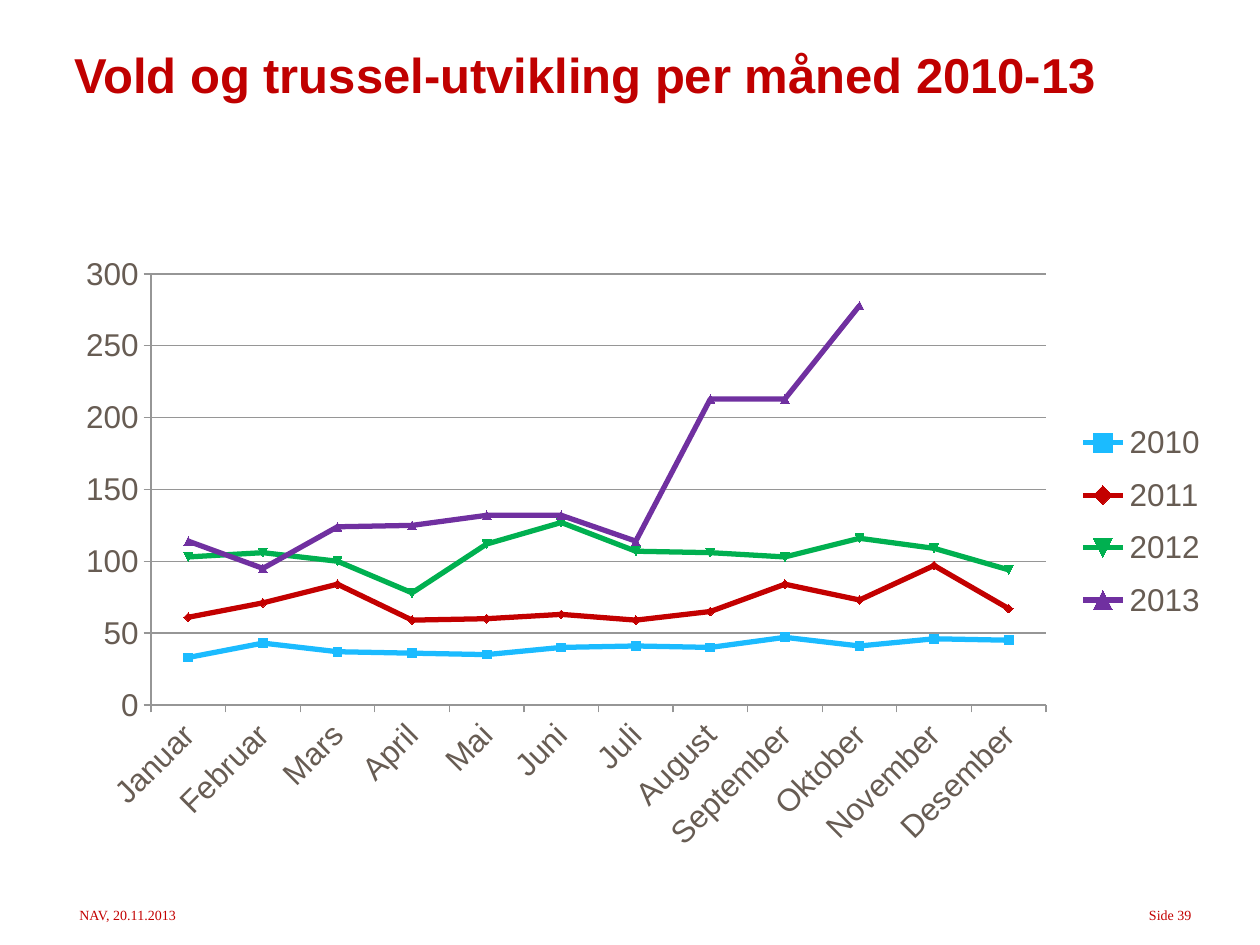
from lxml.etree import SubElement
from pptx import Presentation
from pptx.chart.data import CategoryChartData
from pptx.dml.color import RGBColor
from pptx.enum.chart import XL_CHART_TYPE, XL_LEGEND_POSITION, XL_MARKER_STYLE, XL_TICK_MARK
from pptx.enum.text import MSO_ANCHOR, PP_ALIGN
from pptx.oxml.ns import qn
from pptx.util import Pt

PX = 914400 // 126
RED, TITLE_RED, TEXT, GRID = "C30000", "C00000", "675C53", "969696"

TITLE = "Vold og trussel-utvikling per måned 2010-13"
FOOTERS = [
    ("NAV, 20.11.2013", (67, 900, 126, 29), PP_ALIGN.LEFT),
    ("Side 39", (1134, 900, 70, 29), PP_ALIGN.RIGHT),
]
MONTHS = ["Januar", "Februar", "Mars", "April", "Mai", "Juni", "Juli",
          "August", "September", "Oktober", "November", "Desember"]
YEARS = [
    ("2010", "1BBBFF", [33, 43, 37, 36, 35, 40, 41, 40, 47, 41, 46, 45]),
    ("2011", "C30000", [61, 71, 84, 59, 60, 63, 59, 65, 84, 73, 97, 67]),
    ("2012", "00B050", [103, 106, 100, 78, 112, 127, 107, 106, 103, 116, 109, 94]),
    ("2013", "7030A0", [114, 95, 124, 125, 132, 132, 114, 213, 213, 278, None, None]),
]
CHART_BOX = (63, 244, 1154, 620)
PLOT_BOX = (151, 274, 895, 431)
LEGEND_BOX = (1073, 408, 137, 227)


def rgb(color):
    return RGBColor.from_string(color)


def emu(box):
    return [value * PX for value in box]


def style_font(font, name, size, color, bold=False):
    font.name, font.size, font.bold = name, Pt(size), bold
    font.color.rgb = rgb(color)


def add_text(slide, text, box, name, size, color, bold=False,
             align=PP_ALIGN.LEFT, wrap=False):
    frame = slide.shapes.add_textbox(*emu(box)).text_frame
    frame.word_wrap = wrap
    frame.vertical_anchor = MSO_ANCHOR.TOP
    para = frame.paragraphs[0]
    para.text, para.alignment = text, align
    style_font(para.font, name, size, color, bold)
    return para


def place(layout, box, inner=False):
    """Fill a chart layout element with a box given in slide px."""
    for child in list(layout):
        layout.remove(child)
    manual = SubElement(layout, qn("c:manualLayout"))
    left, top, width, height = CHART_BOX
    settings = [("layoutTarget", "inner")] if inner else []
    settings += [("xMode", "edge"), ("yMode", "edge"),
                 ("x", round((box[0] - left) / width, 4)),
                 ("y", round((box[1] - top) / height, 4)),
                 ("w", round(box[2] / width, 4)),
                 ("h", round(box[3] / height, 4))]
    for tag, value in settings:
        SubElement(manual, qn(f"c:{tag}")).set("val", str(value))


def style_axes(chart):
    months, counts = chart.category_axis, chart.value_axis
    for axis in (months, counts):
        axis.major_tick_mark = XL_TICK_MARK.OUTSIDE
        axis.format.line.color.rgb = rgb(GRID)
        style_font(axis.tick_labels.font, "Arial", 18, TEXT)
    months.has_major_gridlines = False
    months._element.find(f"{qn('c:txPr')}/{qn('a:bodyPr')}").set("rot", "-2700000")
    counts.minimum_scale, counts.maximum_scale, counts.major_unit = 0, 300, 50
    counts.has_major_gridlines = True
    counts.major_gridlines.format.line.color.rgb = rgb(GRID)


def add_line_chart(slide):
    data = CategoryChartData()
    data.categories = MONTHS
    for year, _, values in YEARS:
        data.add_series(year, values)
    chart = slide.shapes.add_chart(
        XL_CHART_TYPE.LINE_MARKERS, *emu(CHART_BOX), data).chart
    style_font(chart.font, "Arial", 18, TEXT)
    chart.has_title = False
    style_axes(chart)

    chart.plots[0].vary_by_categories = False
    for series, (_, color, _) in zip(chart.plots[0].series, YEARS):
        series.smooth = False
        series.format.line.color.rgb = rgb(color)
        series.format.line.width = Pt(3)
        marker = series.marker
        marker.style, marker.size = XL_MARKER_STYLE.AUTOMATIC, 5
        marker.format.fill.solid()
        marker.format.fill.fore_color.rgb = rgb(color)
        marker.format.line.color.rgb = rgb(color)

    chart.has_legend = True
    legend = chart.legend
    legend.position, legend.include_in_layout = XL_LEGEND_POSITION.RIGHT, False
    style_font(legend.font, "Arial", 18, TEXT)

    area = chart._chartSpace.chart.plotArea
    area_layout = area.find(qn("c:layout"))
    if area_layout is None:
        area_layout = area.makeelement(qn("c:layout"))
        area.insert(0, area_layout)
    place(area_layout, PLOT_BOX, inner=True)
    legend_layout = legend._element.find(qn("c:layout"))
    if legend_layout is None:
        legend_layout = area.makeelement(qn("c:layout"))
        legend._element.find(qn("c:legendPos")).addnext(legend_layout)
    place(legend_layout, LEGEND_BOX)


def main():
    deck = Presentation()
    deck.slide_width, deck.slide_height = 1260 * PX, 945 * PX
    slide = deck.slides.add_slide(deck.slide_layouts[6])
    for text, box, align in FOOTERS:
        add_text(slide, text, box, "Times New Roman", 8, RED, align=align)
    title = add_text(slide, TITLE, (62, 50, 1051, 156), "Arial", 28,
                     TITLE_RED, bold=True, wrap=True)
    title.line_spacing = 0.8
    add_line_chart(slide)
    deck.save("out.pptx")


if __name__ == "__main__":
    main()
